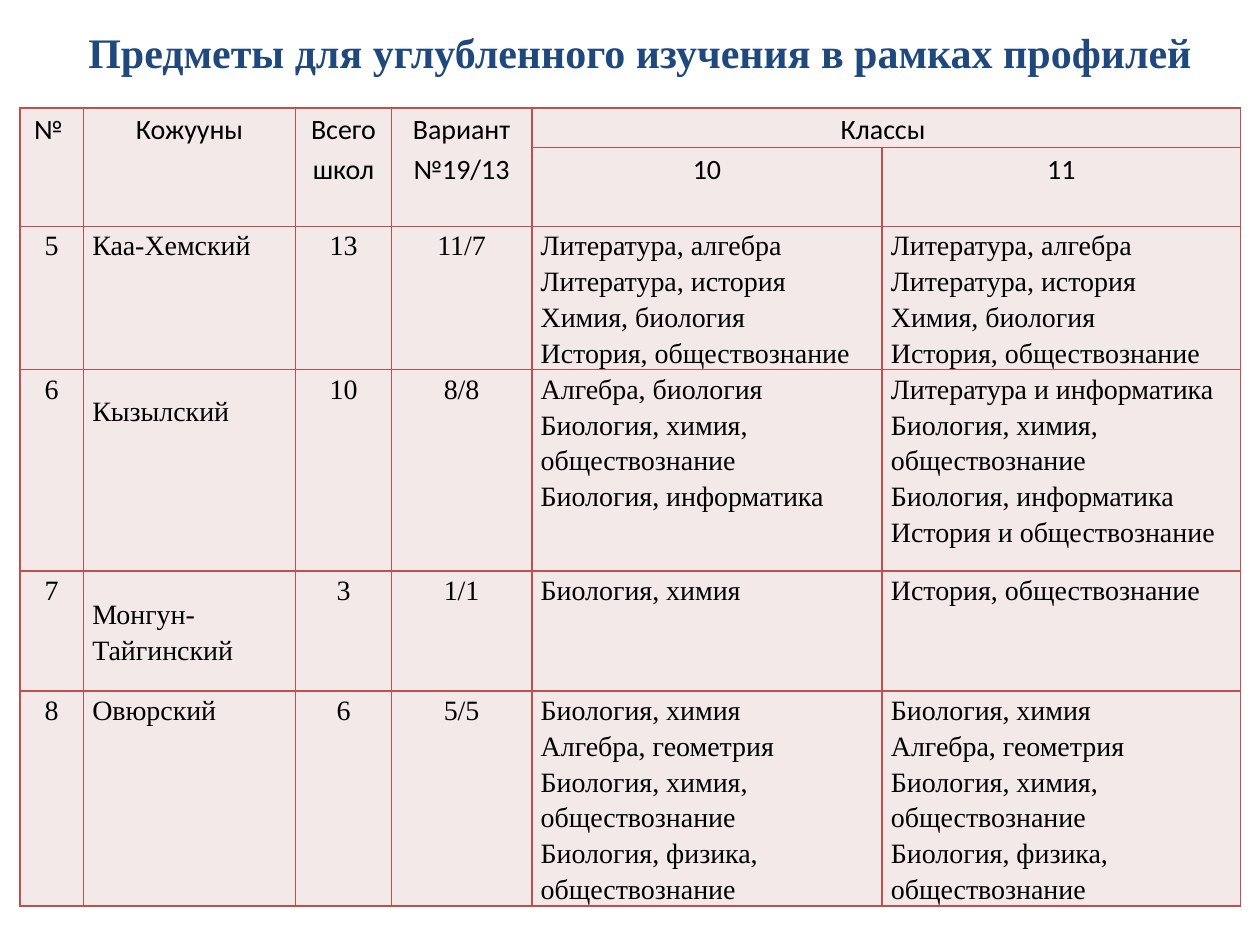
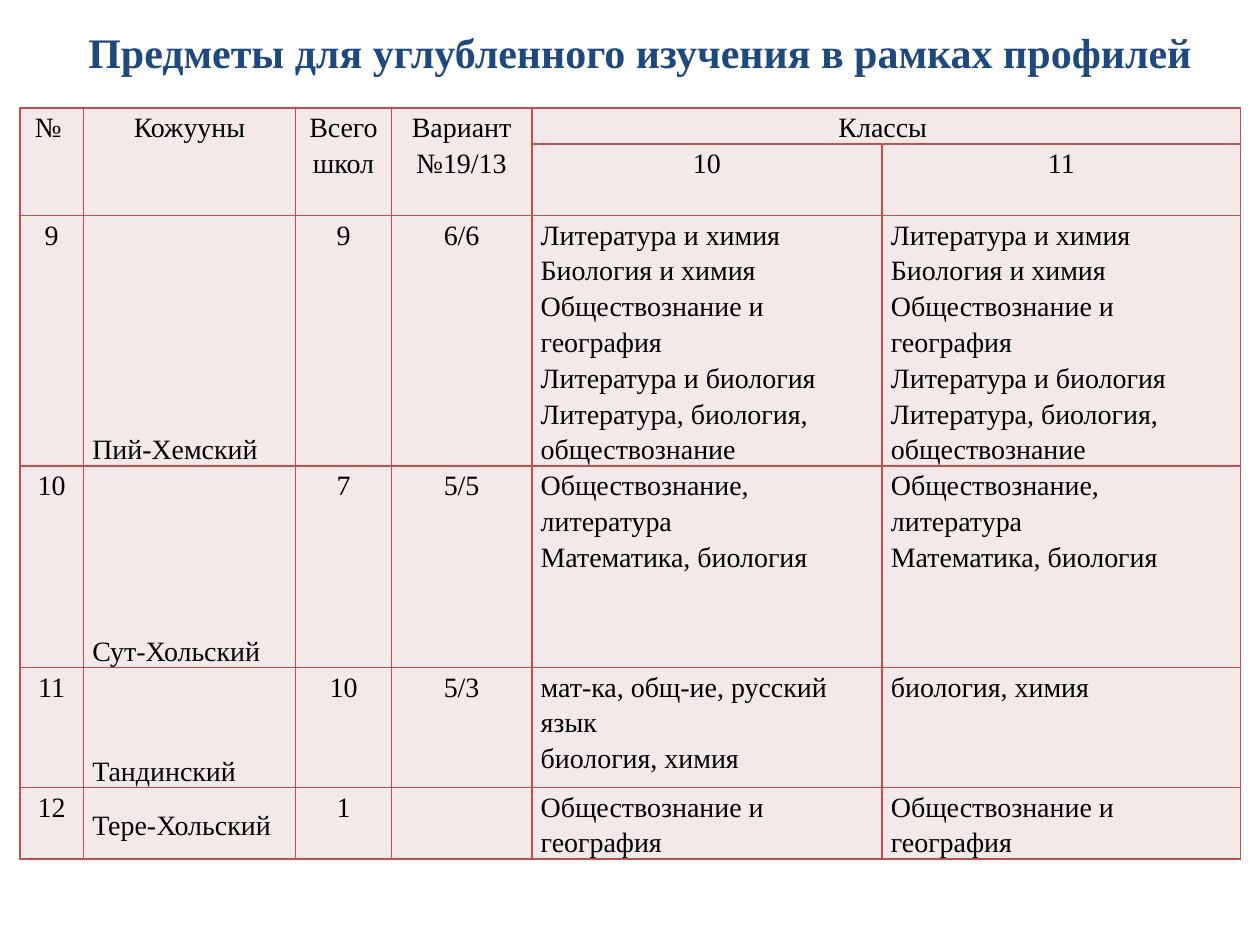
from dataclasses import dataclass

from lxml.etree import SubElement
from pptx import Presentation
from pptx.dml.color import RGBColor
from pptx.enum.text import MSO_ANCHOR as Anchor, MSO_AUTO_SIZE as AutoSize, PP_ALIGN as Align
from pptx.oxml.ns import qn
from pptx.util import Cm, Pt


@dataclass(frozen=True)
class Theme:
    title_color: RGBColor = RGBColor(0x1F, 0x49, 0x7D)
    text_color: RGBColor = RGBColor(0, 0, 0)
    cell_fill: RGBColor = RGBColor(0xF4, 0xE9, 0xE9)
    border: RGBColor = RGBColor(0xC0, 0x50, 0x4D)
    serif: str = "Times New Roman"
    sans: str = "Calibri"
    title_size: Pt = Pt(24)
    text_size: Pt = Pt(16)
    border_width: Pt = Pt(1)
    line_spacing: float = 1.15


@dataclass(frozen=True)
class Box:
    left: float
    top: float
    width: float
    height: float

    def lengths(self):
        return [Cm(side) for side in (self.left, self.top, self.width, self.height)]


@dataclass(frozen=True)
class District:
    number: int
    name: str
    schools: int
    variant: str
    grade_10: list
    grade_11: list
    height: float
    anchor: Anchor = Anchor.TOP
    name_offset: float = 0


THEME = Theme()
TITLE = "Предметы для углубленного изучения в рамках профилей"
TITLE_BOX = Box(0.4, 0.4, 25, 1.28)
COLUMN_WIDTHS = [1.28, 4.28, 1.93, 2.83, 7.06, 7.23]
HEADINGS = [["№ "], ["Кожууны"], ["Всего", "школ"], ["Вариант №19/13"], ["Классы "]]
GRADES = ["10", "11"]
GRADE_COLUMN = 4

KAA_KHEM = ["Литература, алгебра", "Литература, история", "Химия, биология",
            "История, обществознание"]
OVYUR = ["Биология, химия", "Алгебра, геометрия", "Биология, химия, обществознание",
         "Биология, физика, обществознание"]
PIY_KHEM = ["Литература и химия", "Биология и химия", "Обществознание и география",
            "Литература и биология", "Литература, биология, обществознание"]
SUT_KHOL = ["Обществознание, литература", "Математика, биология"]
TERE_KHOL = ["Обществознание и география"]

DISTRICTS_5_TO_8 = [
    District(5, "Каа-Хемский", 13, "11/7", KAA_KHEM, KAA_KHEM, 2.89),
    District(6, "Кызылский", 10, "8/8",
             ["Алгебра, биология", "Биология, химия, обществознание", "Биология, информатика"],
             ["Литература и информатика", "Биология, химия, обществознание",
              "Биология, информатика", "История и обществознание"],
             4.06, name_offset=0.44),
    District(7, "Монгун-Тайгинский", 3, "1/1", ["Биология, химия"],
             ["История, обществознание"], 2.42, Anchor.MIDDLE),
    District(8, "Овюрский", 6, "5/5", OVYUR, OVYUR, 4.33),
]
DISTRICTS_9_TO_12 = [
    District(9, "Пий-Хемский", 9, "6/6", PIY_KHEM, PIY_KHEM, 5.05, Anchor.BOTTOM),
    District(10, "Сут-Хольский", 7, "5/5", SUT_KHOL, SUT_KHOL, 4.06, Anchor.BOTTOM),
    District(11, "Тандинский", 10, "5/3", ["мат-ка, общ-ие, русский язык", "биология, химия"],
             ["биология, химия"], 2.42, Anchor.BOTTOM),
    District(12, "Тере-Хольский", 1, "", TERE_KHOL, TERE_KHOL, 1.44, Anchor.MIDDLE),
]


def add_run(para, text, font_name, size, color, bold=False):
    span = para.add_run()
    span.text = text
    span.font.name = font_name
    span.font.size = size
    span.font.bold = bold
    span.font.color.rgb = color


def style_cell(cell):
    properties = cell._tc.get_or_add_tcPr()
    for side in ("a:lnL", "a:lnR", "a:lnT", "a:lnB"):
        line = SubElement(properties, qn(side), w=str(THEME.border_width))
        fill = SubElement(line, qn("a:solidFill"))
        SubElement(fill, qn("a:srgbClr"), val=str(THEME.border))
    cell.fill.solid()
    cell.fill.fore_color.rgb = THEME.cell_fill


def write_cell(cell, lines, font_name, align=Align.CENTER, side_margin=0.18,
               anchor=Anchor.TOP, top_margin=0):
    cell.margin_left = cell.margin_right = Cm(side_margin)
    cell.margin_top, cell.margin_bottom = Cm(top_margin), 0
    cell.vertical_anchor = anchor
    frame = cell.text_frame
    for index, text in enumerate(lines):
        para = frame.add_paragraph() if index else frame.paragraphs[0]
        para.alignment = align
        para.line_spacing = THEME.line_spacing
        if text:
            add_run(para, text, font_name, THEME.text_size, THEME.text_color)


def add_title(page, box):
    title = page.shapes.title
    title.left, title.top, title.width, title.height = box.lengths()
    frame = title.text_frame
    frame.word_wrap = True
    frame.auto_size = AutoSize.NONE
    frame.vertical_anchor = Anchor.MIDDLE
    para = frame.paragraphs[0]
    para.alignment = Align.CENTER
    add_run(para, TITLE, THEME.serif, THEME.title_size, THEME.title_color, bold=True)


def write_header(table, font_name):
    for column, lines in enumerate(HEADINGS):
        heading = table.cell(0, column)
        if column < GRADE_COLUMN:
            heading.merge(table.cell(1, column))
        else:
            heading.merge(table.cell(0, column + 1))
        write_cell(heading, lines, font_name, side_margin=0.1)
    for column, grade in enumerate(GRADES, GRADE_COLUMN):
        write_cell(table.cell(1, column), [grade], font_name, side_margin=0.1)


def write_district(table, row, district):
    centred = {0: str(district.number), 2: str(district.schools), 3: district.variant}
    for column, text in centred.items():
        write_cell(table.cell(row, column), [text], THEME.serif)
    write_cell(table.cell(row, 1), [district.name], THEME.serif, Align.LEFT,
               anchor=district.anchor, top_margin=district.name_offset)
    for column, subjects in enumerate((district.grade_10, district.grade_11), GRADE_COLUMN):
        write_cell(table.cell(row, column), subjects, THEME.serif, Align.LEFT)


def add_district_table(page, left, top, districts, header_heights, header_font):
    heights = header_heights + [district.height for district in districts]
    box = Box(left, top, sum(COLUMN_WIDTHS), sum(heights))
    table = page.shapes.add_table(len(heights), len(COLUMN_WIDTHS), *box.lengths()).table
    table.first_row = table.horz_banding = False
    for column, width in zip(table.columns, COLUMN_WIDTHS):
        column.width = Cm(width)
    for row, height in zip(table.rows, heights):
        row.height = Cm(height)
    for cell in table.iter_cells():
        style_cell(cell)
    write_header(table, header_font)
    for row, district in enumerate(districts, len(header_heights)):
        write_district(table, row, district)


def add_subjects_page(deck, districts, header_heights, header_font):
    page = deck.slides.add_slide(deck.slide_layouts[5])
    add_title(page, TITLE_BOX)
    add_district_table(page, 0.4, 2.18, districts, header_heights, header_font)


def main():
    deck = Presentation()
    deck.slide_width, deck.slide_height = Cm(25.4), Cm(19.05)
    add_subjects_page(deck, DISTRICTS_5_TO_8, [0.79, 1.58], THEME.sans)
    add_subjects_page(deck, DISTRICTS_9_TO_12, [0.72, 1.44], THEME.serif)
    deck.save("out.pptx")


if __name__ == "__main__":
    main()
